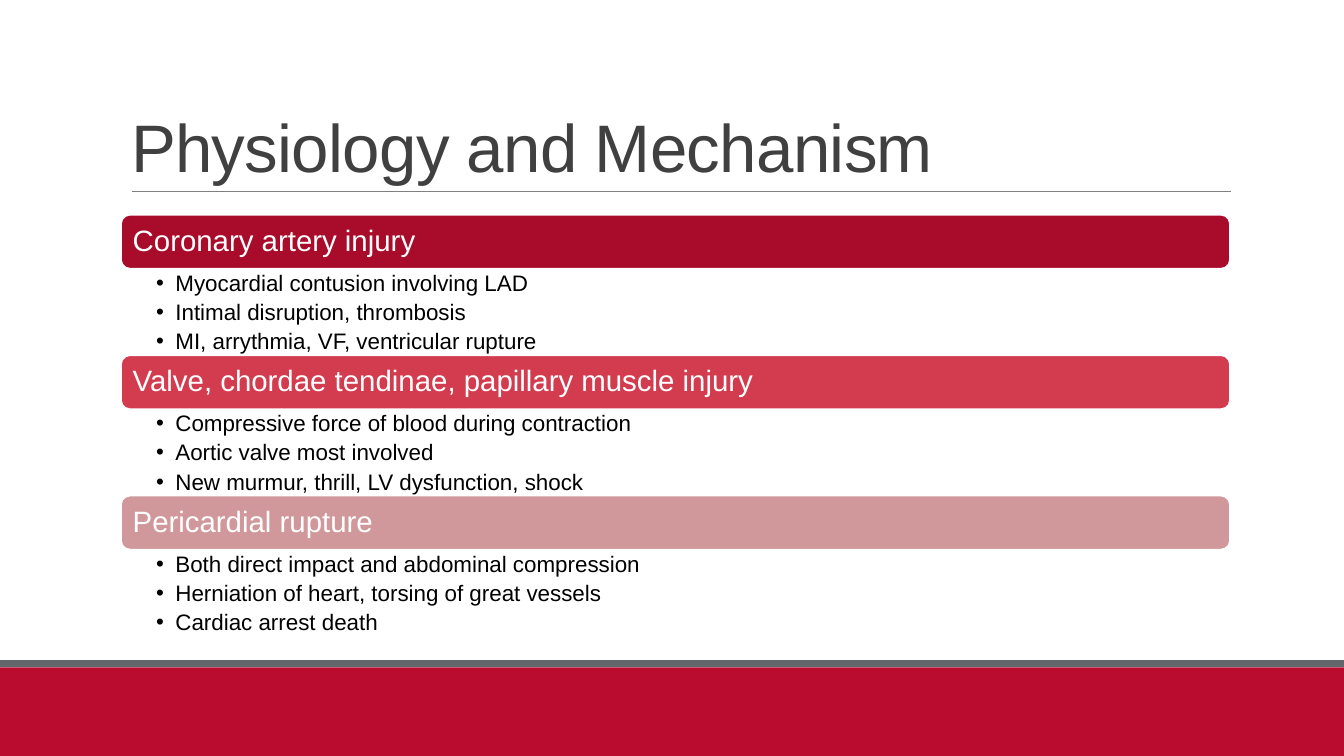
from lxml.etree import SubElement
from pptx import Presentation
from pptx.dml.color import RGBColor
from pptx.enum.shapes import MSO_CONNECTOR as Connector, MSO_SHAPE as Shape
from pptx.enum.text import MSO_ANCHOR as Anchor, MSO_AUTO_SIZE as AutoSize, PP_ALIGN as Align
from pptx.oxml.ns import qn
from pptx.util import Inches, Pt

SLIDE_WIDTH, SLIDE_HEIGHT = 13.33, 7.5
LEFT, WIDTH = 1.2, 11
TITLE_BOX = (LEFT, 0.31, WIDTH, 1.59)
INJURIES_BOX = (LEFT, 2.13, WIDTH, 4.18)
FOOTER_BOX = (0, 6.55, SLIDE_WIDTH, SLIDE_HEIGHT - 6.55)
HEADING_SHARE = 0.385
FONT = "Arial"

INJURIES = [
    ("Coronary artery injury", "A90B2B", [
        "Myocardial contusion involving LAD",
        "Intimal disruption, thrombosis",
        "MI, arrythmia, VF, ventricular rupture",
    ]),
    ("Valve, chordae tendinae, papillary muscle injury", "D33B4F", [
        "Compressive force of blood during contraction",
        "Aortic valve most involved",
        "New murmur, thrill, LV dysfunction, shock",
    ]),
    ("Pericardial rupture", "D1989B", [
        "Both direct impact and abdominal compression",
        "Herniation of heart, torsing of great vessels",
        "Cardiac arrest death",
    ]),
]


def color(value):
    return RGBColor.from_string(value)


def inches(box):
    return [Inches(length) for length in box]


def set_frame(frame, insets, anchor):
    frame.word_wrap = True
    frame.auto_size = AutoSize.NONE
    frame.vertical_anchor = anchor
    (frame.margin_left, frame.margin_top,
     frame.margin_right, frame.margin_bottom) = inches(insets)


def set_paragraph(paragraph, size, ink, line_spacing):
    paragraph.alignment = Align.LEFT
    paragraph.line_spacing = line_spacing
    paragraph.font.name = FONT
    paragraph.font.size = Pt(size)
    paragraph.font.color.rgb = color(ink)


def add_bullet(paragraph):
    properties = paragraph._p.get_or_add_pPr()
    properties.set("marL", str(Inches(0.19)))
    properties.set("indent", str(Inches(-0.19)))
    SubElement(properties, qn("a:buFont")).set("typeface", FONT)
    SubElement(properties, qn("a:buChar")).set("char", "•")


def add_block(slide, kind, box, fill):
    block = slide.shapes.add_shape(kind, *inches(box))
    block.shadow.inherit = False
    block.fill.solid()
    block.fill.fore_color.rgb = color(fill)
    block.line.fill.background()
    return block


def add_footer(slide, box):
    left, top, width, height = box
    stripe = 0.07
    add_block(slide, Shape.RECTANGLE,
              (left, top + stripe, width, height - stripe), "BA0C2F")
    add_block(slide, Shape.RECTANGLE, (left, top, width, stripe), "63666A")


def add_title(slide, box):
    left, top, width, height = box
    title = slide.shapes.title
    title.left, title.top, title.width, title.height = inches(box)
    title.text_frame.text = "Physiology and Mechanism"
    set_frame(title.text_frame, (0.1, 0.05, 0.1, 0.05), Anchor.BOTTOM)
    heading = title.text_frame.paragraphs[0]
    set_paragraph(heading, 48, "404040", 0.85)
    heading.font._element.set("spc", "-50")

    start, baseline = left + 0.11, top + height
    rule = slide.shapes.add_connector(
        Connector.STRAIGHT,
        *inches((start, baseline, start + width - 0.1, baseline)))
    rule.line.color.rgb = color("808080")
    rule.line.width = Pt(0.5)
    SubElement(rule._element.spPr, qn("a:effectLst"))


def add_injury(slide, box, name, fill, effects):
    left, top, width, height = box
    heading_height = height * HEADING_SHARE
    banner = add_block(slide, Shape.ROUNDED_RECTANGLE,
                       (left, top, width, heading_height), fill)
    banner.line.color.rgb = color("FFFFFF")
    banner.line.width = Pt(1.25)
    banner.text_frame.text = name
    set_frame(banner.text_frame, (0.09, 0.09, 0.09, 0.09), Anchor.MIDDLE)
    set_paragraph(banner.text_frame.paragraphs[0], 21, "FFFFFF", 0.9)

    details = slide.shapes.add_textbox(
        *inches((left, top + heading_height, width, height - heading_height)))
    set_frame(details.text_frame, (0.35, 0.03, 0.16, 0.03), Anchor.TOP)
    details.text_frame.text = "\n".join(effects)
    for effect in details.text_frame.paragraphs:
        effect.level = 1
        add_bullet(effect)
        set_paragraph(effect, 16, "000000", 0.9)
        effect.space_after = Pt(3.7)


def add_injuries(slide, box):
    left, top, width, height = box
    row_height = height / len(INJURIES)
    for row, injury in enumerate(INJURIES):
        add_injury(slide, (left, top + row * row_height, width, row_height), *injury)


def main():
    deck = Presentation()
    deck.slide_width, deck.slide_height = inches((SLIDE_WIDTH, SLIDE_HEIGHT))
    slide = deck.slides.add_slide(deck.slide_layouts[5])
    add_footer(slide, FOOTER_BOX)
    add_title(slide, TITLE_BOX)
    add_injuries(slide, INJURIES_BOX)
    deck.save("out.pptx")


if __name__ == "__main__":
    main()
